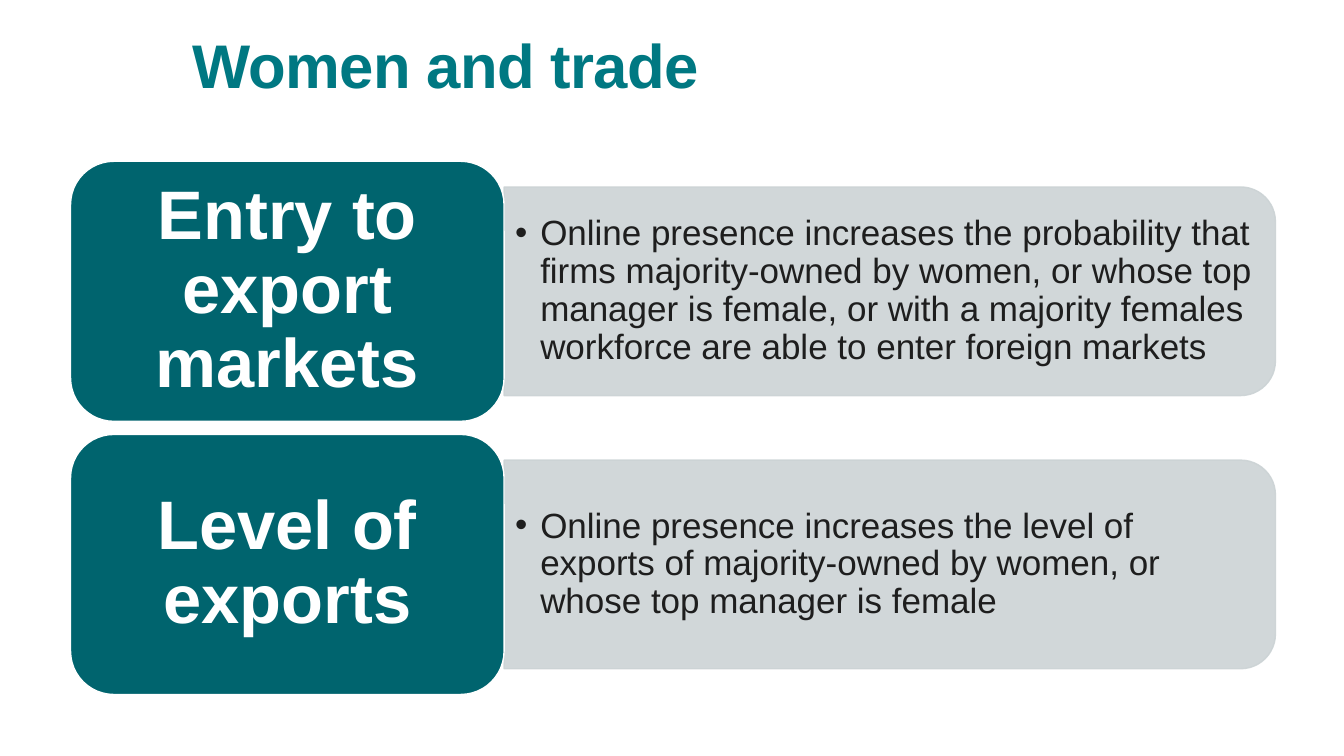
import pptx
import pptx.util
import pptx.dml.color
import pptx.enum.shapes
import pptx.enum.text
import pptx.oxml.ns
import lxml.etree

TITLE = "Women and trade"
ROWS = [
    ("Entry to export markets",
     "Online presence increases the probability that firms majority-owned by women, "
     "or whose top manager is female, or with a majority females workforce are able "
     "to enter foreign markets"),
    ("Level of exports",
     "Online presence increases the level of exports of majority-owned by women, "
     "or whose top manager is female"),
]
TEAL, TITLE_TEAL, GREY, INK, WHITE = "00646E", "007882", "CCD3D5", "1E1E1E", "FFFFFF"

LEFT, TOP, STEP = 0.7, 1.6, 2.71
LABEL_W, LABEL_H = 4.3, 2.58
PANEL_W, PANEL_H = 7.65, 2.07
TEXT_W, TEXT_H = 7.55, 1.87

Inches = pptx.util.Inches
Pt = pptx.util.Pt
SHAPE = pptx.enum.shapes.MSO_SHAPE
ANCHOR = pptx.enum.text.MSO_ANCHOR
ALIGN = pptx.enum.text.PP_ALIGN
qn = pptx.oxml.ns.qn


def color(value):
    return pptx.dml.color.RGBColor.from_string(value)


def box(x, y, w, h):
    return [Inches(v) for v in (x, y, w, h)]


def add_block(s, kind, bounds, fill, line):
    sp = s.shapes.add_shape(kind, *bounds)
    sp.shadow.inherit = False
    sp.fill.solid()
    sp.fill.fore_color.rgb = color(fill)
    sp.line.color.rgb = color(line)
    sp.line.width = Pt(1)
    return sp


def set_text(tf, text, size, value, bold, anchor, insets, align=ALIGN.LEFT):
    tf.word_wrap = True
    tf.auto_size = pptx.enum.text.MSO_AUTO_SIZE.NONE
    tf.vertical_anchor = anchor
    tf.margin_left, tf.margin_top, tf.margin_right, tf.margin_bottom = box(*insets)
    p = tf.paragraphs[0]
    p.alignment = align
    p.line_spacing = 0.9
    p.space_before = Pt(0)
    r = p.add_run()
    r.text = text
    r.font.name = "Arial"
    r.font.size = Pt(size)
    r.font.bold = bold
    r.font.color.rgb = color(value)
    return p


def add_bullet(p):
    pPr = p._p.get_or_add_pPr()
    pPr.set("marL", str(Inches(0.25)))
    pPr.set("indent", str(-Inches(0.25)))
    lxml.etree.SubElement(pPr, qn("a:buFont")).set("typeface", "Arial")
    lxml.etree.SubElement(pPr, qn("a:buChar")).set("char", "•")


def add_row(s, y, label, detail):
    middle = y + LABEL_H / 2
    right = LEFT + LABEL_W
    panel = add_block(
        s, SHAPE.ROUND_2_SAME_RECTANGLE,
        box(right + (PANEL_W - PANEL_H) / 2, middle - PANEL_W / 2, PANEL_H, PANEL_W),
        GREY, GREY)
    panel.rotation = 90
    for clr in panel._element.spPr.iter(qn("a:srgbClr")):
        lxml.etree.SubElement(clr, qn("a:alpha")).set("val", "90000")

    tb = s.shapes.add_textbox(*box(right + 0.01, middle - TEXT_H / 2, TEXT_W, TEXT_H))
    p = set_text(tb.text_frame, detail, 25, INK, False, ANCHOR.MIDDLE,
                 (0.1, 0.05, 0.1, 0.05))
    add_bullet(p)

    sp = add_block(s, SHAPE.ROUNDED_RECTANGLE, box(LEFT, y, LABEL_W, LABEL_H), TEAL, WHITE)
    set_text(sp.text_frame, label, 49, WHITE, True, ANCHOR.MIDDLE,
             (0.2, 0.1, 0.2, 0.1), ALIGN.CENTER)


def main():
    prs = pptx.Presentation()
    prs.slide_width, prs.slide_height = Inches(13.33), Inches(7.5)
    s = prs.slides.add_slide(prs.slide_layouts[5])
    title = s.shapes.title
    title.left, title.top, title.width, title.height = box(1.91, 0.3, 10.74, 1.08)
    p = set_text(title.text_frame, TITLE, 44, TITLE_TEAL, True, ANCHOR.TOP,
                 (0, 0.05, 0.1, 0.05))
    p.runs[0]._r.get_or_add_rPr().set("spc", "-50")
    for i, (label, detail) in enumerate(ROWS):
        add_row(s, TOP + i * STEP, label, detail)
    prs.save("out.pptx")


if __name__ == "__main__":
    main()
